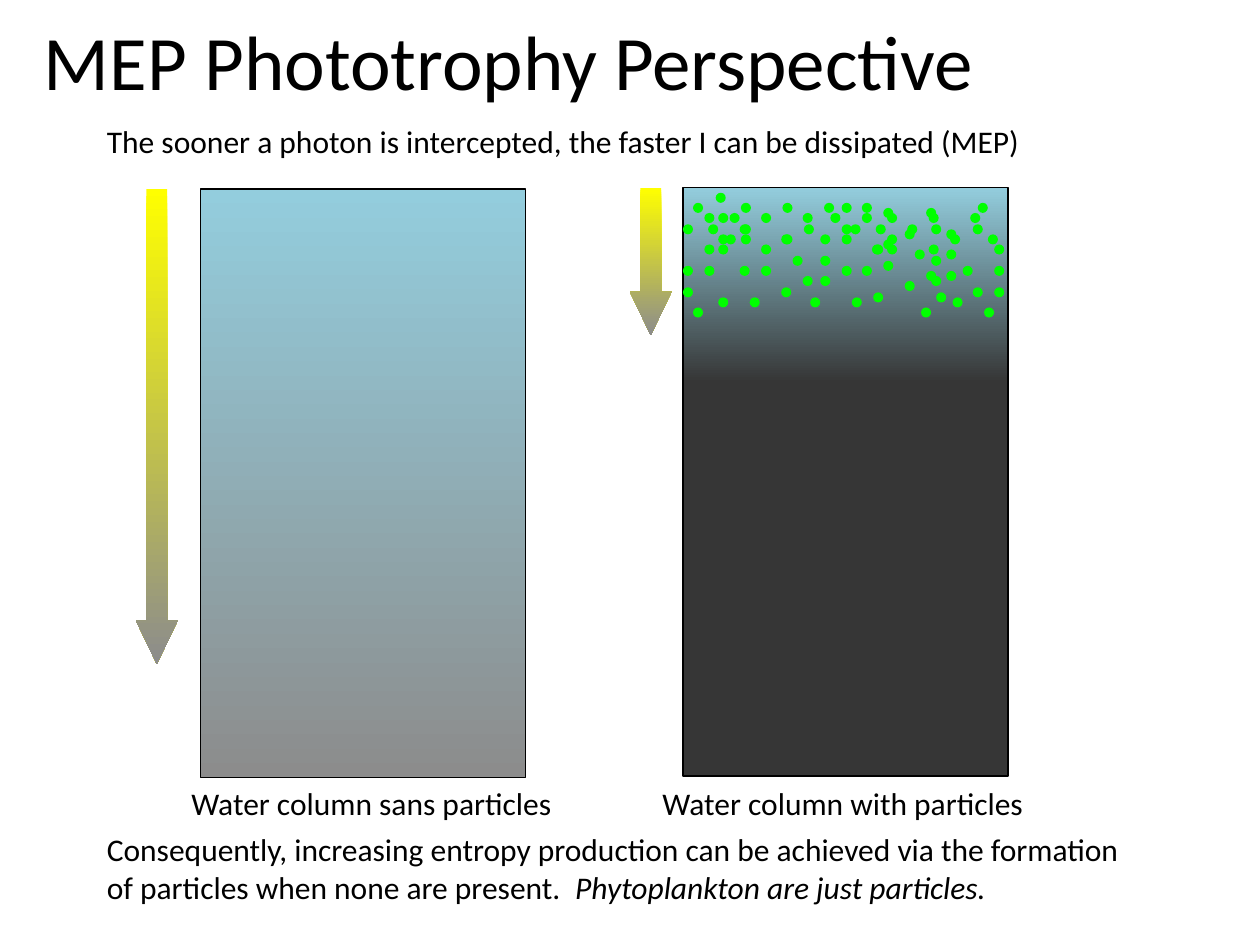
from dataclasses import dataclass

from pptx import Presentation
from pptx.dml.color import RGBColor
from pptx.enum.shapes import MSO_SHAPE
from pptx.enum.text import MSO_ANCHOR, MSO_AUTO_SIZE
from pptx.util import Emu, Pt

PX = 9144  # EMU per px, 100 px to the inch
FONT = "Calibri"
BLACK, GREEN, YELLOW = "000000", "00FF00", "FFFF00"
WATER, MURK, DARK = "93CDDD", "8C8C8C", "363636"
DOT_SIZE = 8


@dataclass(frozen=True)
class Frame:
    left: int
    top: int
    width: int
    height: int

    def emu(self) -> list[Emu]:
        return [Emu(v * PX) for v in (self.left, self.top, self.width, self.height)]


@dataclass(frozen=True)
class Span:
    text: str
    italic: bool = False


@dataclass(frozen=True)
class Caption:
    frame: Frame
    spans: tuple[Span, ...]
    size: int = 18
    wrap: bool = False
    grow: bool = True
    anchor: MSO_ANCHOR = MSO_ANCHOR.TOP


@dataclass(frozen=True)
class Gradient:
    start: str
    end: str
    end_position: float = 1.0


@dataclass(frozen=True)
class WaterColumn:
    frame: Frame
    water: Gradient
    arrow: Frame


COLUMNS = (
    WaterColumn(Frame(159, 150, 258, 467), Gradient(WATER, MURK), Frame(108, 150, 33, 377)),
    WaterColumn(Frame(542, 149, 258, 467), Gradient(WATER, DARK, 0.33), Frame(500, 149, 33, 117)),
)

# Left edges of the particles, by the top of their row
PARTICLES = {
    153: (568,),
    161: (550, 588, 621, 654, 668, 684, 776),
    165: (701, 735),
    169: (559, 570, 579, 604, 637, 659, 684, 704, 737, 770),
    178: (542, 562, 587, 588, 638, 668, 675, 695, 720, 739, 772),
    182: (718, 751),
    186: (570, 576, 588, 620, 621, 651, 668, 704, 754, 784),
    190: (701,),
    194: (559, 570, 604, 692, 693, 704, 737, 789),
    198: (726, 751),
    203: (629, 651, 739),
    207: (701,),
    211: (542, 559, 587, 604, 668, 684, 764, 789),
    215: (735, 751),
    219: (637, 651, 739),
    223: (718,),
    228: (542, 620, 772, 789),
    232: (693, 743),
    236: (570, 595, 643, 676, 756),
    244: (550, 731, 781),
}

CAPTIONS = (
    Caption(Frame(25, 0, 900, 95), (Span("MEP Phototrophy Perspective"),),
            size=44, wrap=True, grow=False, anchor=MSO_ANCHOR.MIDDLE),
    Caption(Frame(75, 92, 753, 40),
            (Span("The sooner a photon is intercepted, the faster I can be dissipated (MEP)"),)),
    Caption(Frame(142, 617, 309, 40), (Span("Water column sans particles"),)),
    Caption(Frame(516, 617, 310, 40), (Span("Water column with particles"),)),
    Caption(Frame(75, 654, 833, 71),
            (Span("Consequently, increasing entropy production can be achieved via "
                  "the formation of particles when none are present.  "),
             Span("Phytoplankton are just particles.", italic=True)),
            wrap=True),
)


def color(value: str) -> RGBColor:
    return RGBColor.from_string(value)


def add_plain_shape(shapes, kind: MSO_SHAPE, frame: Frame):
    shape = shapes.add_shape(kind, *frame.emu())
    shape.shadow.inherit = False
    shape.line.fill.background()
    return shape


def fill_downward(shape, gradient: Gradient) -> None:
    shape.fill.gradient()
    shape.fill.gradient_angle = 270  # counter-clockwise, so top to bottom
    first, last = shape.fill.gradient_stops
    first.position, first.color.rgb = 0, color(gradient.start)
    last.position, last.color.rgb = gradient.end_position, color(gradient.end)


def add_column(page, column: WaterColumn) -> None:
    tank = add_plain_shape(page.shapes, MSO_SHAPE.RECTANGLE, column.frame)
    fill_downward(tank, column.water)
    tank.line.color.rgb = color(BLACK)
    tank.line.width = Pt(0.75)

    light = add_plain_shape(page.shapes, MSO_SHAPE.DOWN_ARROW, column.arrow)
    light.adjustments[0] = 0.5
    light.adjustments[1] = 1.04
    fill_downward(light, Gradient(YELLOW, MURK))


def add_particles(page) -> None:
    group = page.shapes.add_group_shape()
    for top, lefts in PARTICLES.items():
        for left in lefts:
            dot = add_plain_shape(group.shapes, MSO_SHAPE.OVAL,
                                  Frame(left, top, DOT_SIZE, DOT_SIZE))
            dot.fill.solid()
            dot.fill.fore_color.rgb = color(GREEN)


def add_caption(page, caption: Caption) -> None:
    box = page.shapes.add_textbox(*caption.frame.emu())
    text = box.text_frame
    text.word_wrap = caption.wrap
    text.auto_size = MSO_AUTO_SIZE.SHAPE_TO_FIT_TEXT if caption.grow else MSO_AUTO_SIZE.NONE
    text.vertical_anchor = caption.anchor
    para = text.paragraphs[0]
    for span in caption.spans:
        run = para.add_run()
        run.text = span.text
        run.font.name = FONT
        run.font.size = Pt(caption.size)
        run.font.italic = span.italic
        run.font.color.rgb = color(BLACK)


def main() -> None:
    deck = Presentation()
    deck.slide_width, deck.slide_height = Emu(1000 * PX), Emu(750 * PX)
    page = deck.slides.add_slide(deck.slide_layouts[6])

    # Water columns with their light arrows
    for column in COLUMNS:
        add_column(page, column)
    add_particles(page)

    # Title, captions and conclusion
    for caption in CAPTIONS:
        add_caption(page, caption)

    deck.save("out.pptx")


if __name__ == "__main__":
    main()
